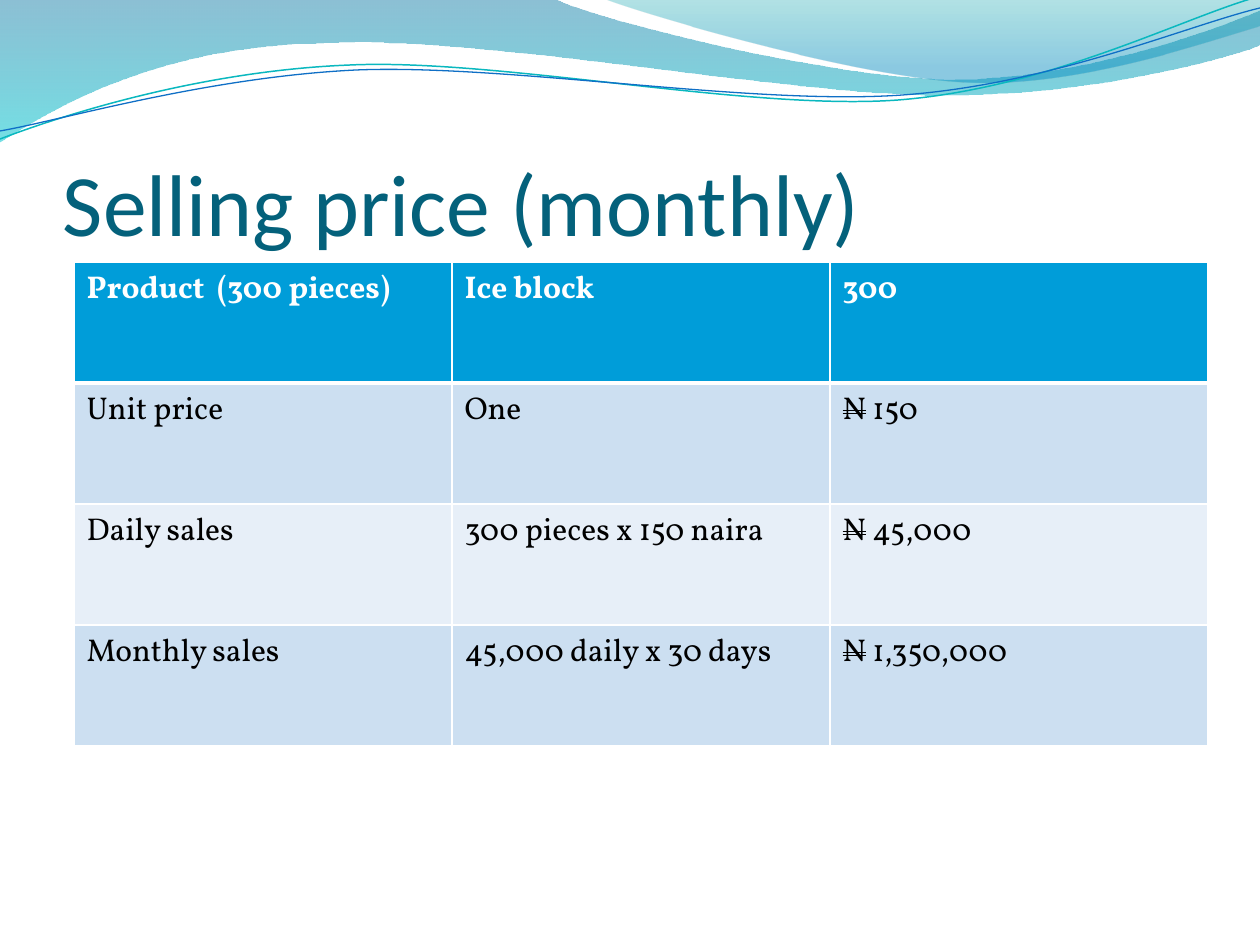
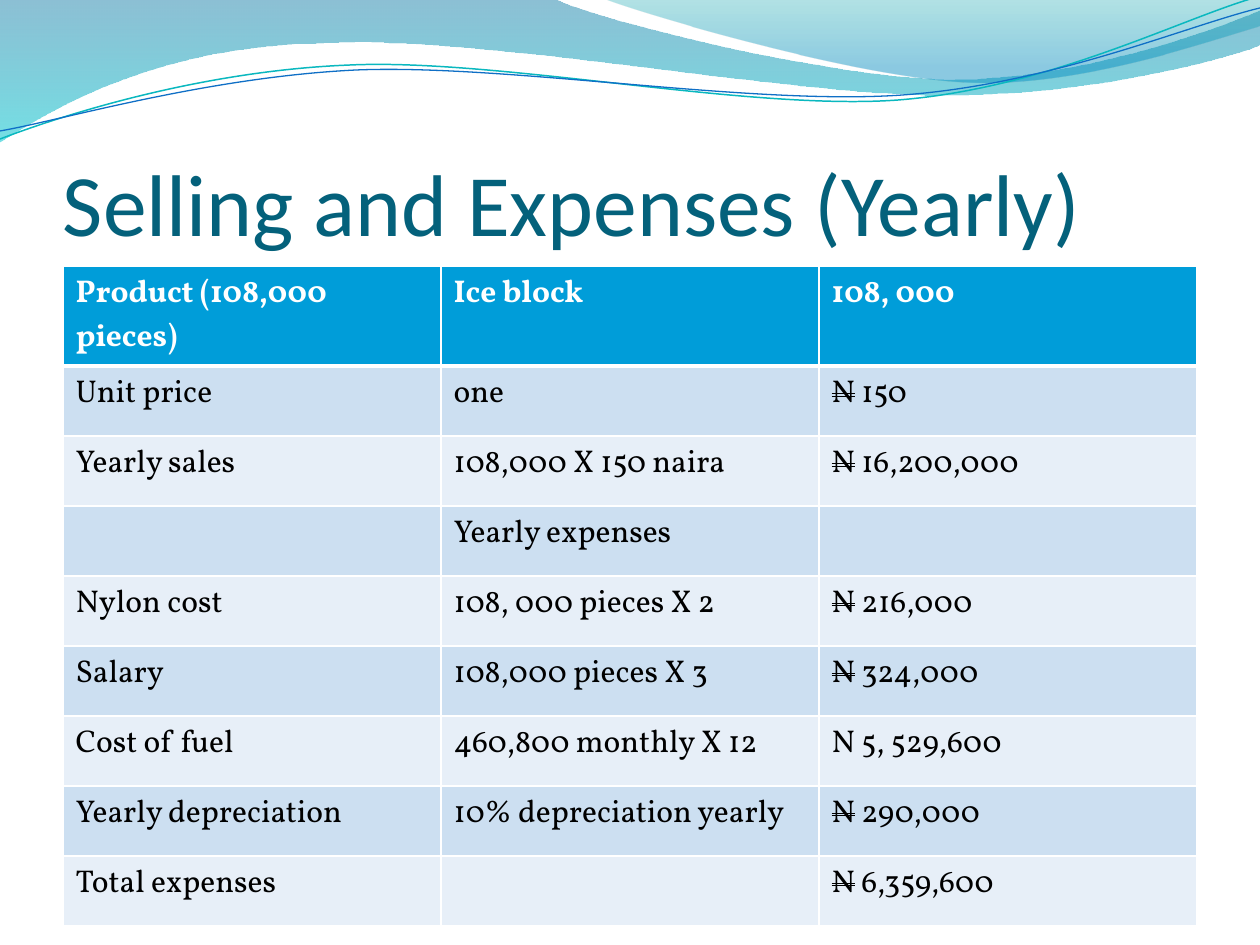
from lxml import etree
from pptx import Presentation
from pptx.dml.color import RGBColor
from pptx.enum.text import MSO_ANCHOR
from pptx.oxml import parse_xml
from pptx.oxml.ns import nsdecls, qn
from pptx.util import Emu, Pt

SCALE = 914400 / 126  # EMU per px
WIDTH, HEIGHT = 1260, 945

TITLE_FONT, BODY_FONT = "Calibri", "Vollkorn"
TITLE, WHITE, BLACK = "04617B", "FFFFFF", "000000"
HEADER, BANDS = "009DD9", ("CCDFF1", "E7EFF8")
TABLE_WIDTH = 1134

# Outlines: a pair is a straight step, six numbers are a Bézier step
WAVE = [(0, 0), (554, -1), (600, 21, 837, 79, 955, 79),
        (1075, 79, 1207, 33, 1260, 11), (1261, 45),
        (1238, 55, 1096, 96, 940, 95), (784, 95, 481, 35, 324, 43),
        (163, 45, 58, 105, -1, 142), (0, 0)]
CREST = [(604, -1), (641, 14, 859, 78, 969, 82),
         (1079, 87, 1211, 40, 1260, 26), (1260, 0), (604, -1)]
TEAL_LINE = [(0, 139), (60, 116, 199, 71, 349, 65),
             (498, 58, 747, 111, 898, 100), (1050, 88, 1182, 18, 1257, -3)]
BLUE_LINE = [(0, 131), (59, 121, 207, 77, 357, 70),
             (508, 64, 752, 106, 903, 95), (1053, 84, 1186, 26, 1260, 8)]

# Text before a bar is struck through
MONTHLY = [
    ("Product  (300 pieces)", "Ice block", "300"),
    ("Unit price", "One", "N| 150"),
    ("Daily sales", "300 pieces x 150 naira", "N| 45,000"),
    ("Monthly sales", "45,000 daily x 30 days", "N| 1,350,000"),
]
YEARLY = [
    ("Product (108,000 pieces)", "Ice block", "108, 000"),
    ("Unit price", "one", "N| 150"),
    ("Yearly sales", "108,000 X 150 naira", "N| 16,200,000"),
    ("", "Yearly expenses", ""),
    ("Nylon cost", "108, 000 pieces X 2", "N| 216,000"),
    ("Salary", "108,000 pieces X 3", "N| 324,000"),
    ("Cost of fuel", "460,800 monthly X 12", "N 5, 529,600"),
    ("Yearly depreciation", "10% depreciation yearly", "N| 290,000"),
    ("Total expenses", "", "N| 6,359,600"),
]


def px(n):
    return Emu(round(n * SCALE))


def rgb(color):
    return RGBColor.from_string(color)


def set_font(p, name, size, color, bold=False):
    p.font.name, p.font.size, p.font.bold = name, Pt(size), bold
    p.font.color.rgb = rgb(color)


def add_outline(s, steps, close):
    """Freeform through the end of each step, bent where it is a Bézier."""
    ends = [(px(step[-2]), px(step[-1])) for step in steps]
    builder = s.shapes.build_freeform(*ends[0], scale=1.0)
    builder.add_line_segments(ends[1:], close=close)
    sp = builder.convert_to_shape()
    sp.shadow.inherit = False
    sp.fill.background()

    lines = list(sp._element.iter(qn("a:lnTo")))
    for line, step in zip(lines, steps[1:]):
        if len(step) == 2:
            continue
        curve = etree.Element(qn("a:cubicBezTo"))
        for x, y in zip(step[::2], step[1::2]):
            etree.SubElement(curve, qn("a:pt"), x=str(px(x) - sp.left),
                             y=str(px(y) - sp.top))
        line.getparent().replace(line, curve)
    return sp


def add_band(s, steps, stops):
    """Closed shape with a see-through gradient from top to bottom."""
    sp = add_outline(s, steps, True)
    sp.line.fill.background()
    stops_xml = "".join(
        f'<a:gs pos="{pos * 1000}"><a:srgbClr val="{color}">'
        f'<a:alpha val="{alpha * 1000}"/></a:srgbClr></a:gs>'
        for pos, color, alpha in stops)
    gradient = parse_xml(
        f'<a:gradFill {nsdecls("a")} rotWithShape="1"><a:gsLst>{stops_xml}'
        '</a:gsLst><a:lin ang="5400000" scaled="0"/></a:gradFill>')
    sp_pr = sp._element.spPr
    sp_pr.replace(sp_pr.find(qn("a:noFill")), gradient)


def add_curve(s, steps, color, width):
    sp = add_outline(s, steps, False)
    sp.line.color.rgb = rgb(color)
    sp.line.width = Pt(width)


def add_title(s, text):
    tf = s.shapes.add_textbox(px(63), px(97), px(1134), px(157)).text_frame
    tf.word_wrap = True
    tf.vertical_anchor = MSO_ANCHOR.BOTTOM
    tf.margin_left = tf.margin_right = tf.margin_bottom = 0
    p = tf.paragraphs[0]
    p.text = text
    set_font(p, TITLE_FONT, 50, TITLE)


def set_borders(cell, top, bottom):
    tc_pr = cell._tc.get_or_add_tcPr()
    for side, width in (("L", 1), ("R", 1), ("T", top), ("B", bottom)):
        ln = etree.SubElement(tc_pr, qn(f"a:ln{side}"), w=str(Pt(width)))
        fill = etree.SubElement(ln, qn("a:solidFill"))
        etree.SubElement(fill, qn("a:srgbClr"), val=WHITE)


def fill_cell(cell, text, row):
    is_header = row == 0
    set_borders(cell, 3 if row == 1 else 1, 3 if is_header else 1)
    cell.fill.solid()
    cell.fill.fore_color.rgb = rgb(HEADER if is_header else BANDS[(row - 1) % 2])
    p = cell.text_frame.paragraphs[0]
    set_font(p, BODY_FONT, 18, WHITE if is_header else BLACK, is_header)
    struck, _, plain = text.rpartition("|")
    if struck:
        r = p.add_run()
        r.text = struck
        r._r.get_or_add_rPr().set("strike", "dblStrike")
    if plain:
        p.add_run().text = plain


def add_price_table(s, left, top, header_height, row_height, rows):
    height = header_height + row_height * (len(rows) - 1)
    table = s.shapes.add_table(
        len(rows), len(rows[0]), px(left), px(top),
        px(TABLE_WIDTH), px(height)).table
    for i, row in enumerate(rows):
        table.rows[i].height = px(row_height if i else header_height)
        for j, text in enumerate(row):
            fill_cell(table.cell(i, j), text, i)


def add_slide(prs, title):
    """Blank slide with the wave header and a title."""
    s = prs.slides.add_slide(prs.slide_layouts[6])
    add_band(s, WAVE, [(0, "0074A1", 45), (100, "00C6CF", 55)])
    add_band(s, CREST, [(0, "00A1A9", 30), (80, "008BBF", 45)])
    add_curve(s, TEAL_LINE, "0AB8BF", 0.85)
    add_curve(s, BLUE_LINE, "0F6FC6", 0.75)
    add_title(s, title)
    return s


def main():
    prs = Presentation()
    prs.slide_width, prs.slide_height = px(WIDTH), px(HEIGHT)

    # Monthly prices
    s = add_slide(prs, "Selling price (monthly)")
    add_price_table(s, 74, 262, 121, 121, MONTHLY)

    # Yearly sales and expenses
    s = add_slide(prs, "Selling and Expenses (Yearly)")
    add_price_table(s, 63, 266, 100, 70, YEARLY)

    prs.save("out.pptx")


if __name__ == "__main__":
    main()
